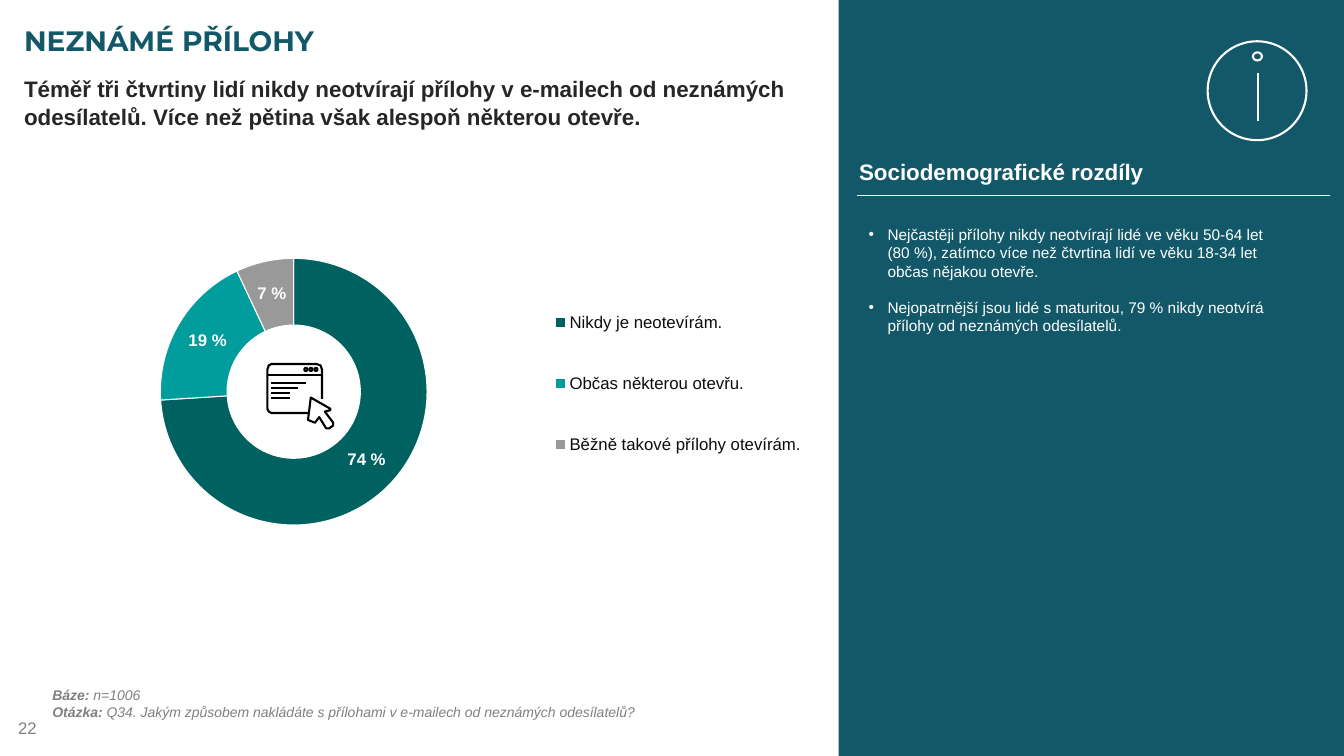
from lxml.etree import SubElement
from pptx import Presentation
from pptx.chart.data import CategoryChartData
from pptx.dml.color import RGBColor
from pptx.enum.chart import XL_CHART_TYPE, XL_LEGEND_POSITION
from pptx.enum.shapes import MSO_CONNECTOR, MSO_SHAPE
from pptx.enum.text import MSO_ANCHOR, PP_ALIGN
from pptx.oxml import parse_xml
from pptx.oxml.ns import nsdecls, qn
from pptx.util import Pt

TEAL = "135868"
WHITE = "FFFFFF"
BLACK = "000000"
GRAY = "808080"


def color(value):
    """Turn a hex string into a colour."""
    return RGBColor.from_string(value)


def style_font(font, size, value, bold=False, italic=False, name="Arial"):
    """Format a font."""
    font.name, font.size = name, Pt(size)
    font.bold, font.italic = bold, italic
    font.color.rgb = color(value)


def place(shape, left, top, width, height):
    """Position a shape, in points."""
    shape.left, shape.top = Pt(left), Pt(top)
    shape.width, shape.height = Pt(width), Pt(height)


def set_margins(frame, horizontal, vertical):
    """Set the inner margins of a text frame."""
    frame.margin_left = frame.margin_right = Pt(horizontal)
    frame.margin_top = frame.margin_bottom = Pt(vertical)


def fill_placeholder(placeholder, box, text, size, value, name, anchor):
    """Place a placeholder and fill it with one bold, left-aligned paragraph."""
    place(placeholder, *box)
    frame = placeholder.text_frame
    frame.text = text
    frame.word_wrap = True
    frame.vertical_anchor = anchor
    set_margins(frame, 7.2, 3.6)
    paragraph = frame.paragraphs[0]
    paragraph.alignment = PP_ALIGN.LEFT
    paragraph.space_before = Pt(0)
    properties = paragraph._p.get_or_add_pPr()
    properties.set("marL", "0")
    properties.set("indent", "0")
    SubElement(properties, qn("a:buNone"))
    style_font(paragraph.runs[0].font, size, value, True, name=name)
    return paragraph


def add_text(slide, box, lines, wrap=True, margins=(7.2, 3.6)):
    """Add a text box whose lines are lists of (text, font settings) runs."""
    frame = slide.shapes.add_textbox(*map(Pt, box)).text_frame
    frame.word_wrap = wrap
    set_margins(frame, *margins)
    for index, runs in enumerate(lines):
        paragraph = frame.add_paragraph() if index else frame.paragraphs[0]
        for text, settings in runs:
            run = paragraph.add_run()
            run.text = text
            style_font(run.font, *settings)
    return frame


def add_bullets(paragraphs, gap):
    """Give paragraphs hanging bullets and a gap between them."""
    for index, paragraph in enumerate(paragraphs):
        paragraph.space_before = Pt(gap if index else 0)
        properties = paragraph._p.get_or_add_pPr()
        properties.set("marL", str(Pt(13.5)))
        properties.set("indent", str(-Pt(13.5)))
        SubElement(properties, qn("a:buFont")).set("typeface", "Arial")
        SubElement(properties, qn("a:buChar")).set("char", "•")


def add_line(slide, start, end, value, width):
    """Add a straight line without a shadow."""
    line = slide.shapes.add_connector(MSO_CONNECTOR.STRAIGHT, *map(Pt, start + end))
    line.line.color.rgb = color(value)
    line.line.width = Pt(width)
    SubElement(line._element.spPr, qn("a:effectLst"))


def outline(shape, value):
    """Leave only a 1.5 pt outline on a shape."""
    shape.shadow.inherit = False
    shape.fill.background()
    shape.line.color.rgb = color(value)
    shape.line.width = Pt(1.5)


def add_ring(slide, box, value):
    """Add an unfilled ellipse."""
    outline(slide.shapes.add_shape(MSO_SHAPE.OVAL, *map(Pt, box)), value)


def add_path(slide, points, close):
    """Add a black outline through points."""
    builder = slide.shapes.build_freeform(*points[0], scale=Pt(1))
    builder.add_line_segments(points[1:], close=close)
    outline(builder.convert_to_shape(), BLACK)


def set_layout(parent, layout):
    """Give a chart element a manual layout as fractions of the chart."""
    for old in parent.findall(qn("c:layout")):
        parent.remove(old)
    inner = '<c:layoutTarget val="inner"/>' if parent.tag == qn("c:plotArea") else ""
    modes = '<c:xMode val="edge"/><c:yMode val="edge"/>'
    values = "".join(f'<c:{key} val="{value}"/>' for key, value in zip("xywh", layout))
    element = parse_xml(
        f'<c:layout {nsdecls("c")}><c:manualLayout>{inner}{modes}{values}'
        "</c:manualLayout></c:layout>"
    )
    position = 1 if parent.tag == qn("c:legend") else 0
    parent.insert(position, element)


def add_doughnut(slide, box, answers):
    """Add a doughnut chart from (answer, percentage, colour) rows."""
    data = CategoryChartData()
    data.categories = [answer for answer, _, _ in answers]
    data.add_series("Series 1", [share for _, share, _ in answers])
    chart = slide.shapes.add_chart(XL_CHART_TYPE.DOUGHNUT, *map(Pt, box), data).chart
    chart.has_title = False
    style_font(chart.font, 10, BLACK)
    chart.has_legend = True
    chart.legend.position = XL_LEGEND_POSITION.RIGHT
    chart.legend.include_in_layout = False
    style_font(chart.legend.font, 12, "0D0D0D")
    set_layout(chart.legend._element, (0.59, 0.2, 0.4, 0.54))
    set_layout(chart._chartSpace.chart.plotArea, (0.096, 0.17, 0.428, 0.639))
    plot = chart.plots[0]
    plot.vary_by_categories = True
    plot.has_data_labels = True
    labels = plot.data_labels
    labels.show_value, labels.show_percentage = True, False
    labels.number_format = '#,##0\\ "%"'
    labels.number_format_is_linked = False
    style_font(labels.font, 12, WHITE, True)
    for index, (_, _, value) in enumerate(answers):
        slice_format = plot.series[0].points[index].format
        slice_format.fill.solid()
        slice_format.fill.fore_color.rgb = color(value)
        slice_format.line.color.rgb = color(WHITE)
        slice_format.line.width = Pt(0.75)


def add_browser_icon(slide):
    """Draw a browser window with a mouse pointer."""
    add_path(slide, [(224.6, 302.4), (219.6, 300.2), (222, 283.5), (236.2, 291.6),
                     (236.2, 293), (231.8, 294.5), (237.6, 302.4), (237.6, 303.8),
                     (234.7, 306), (233.3, 306.4), (227.5, 298.1)], True)
    add_path(slide, [(219.6, 295.2), (194.4, 295.2), (191.9, 294.1), (190.8, 291.6),
                     (190.8, 263.5), (191.9, 261), (194.4, 259.9), (226.1, 259.9),
                     (229.2, 261), (230.4, 263.5), (230.4, 285.1)], False)
    add_line(slide, (190.8, 267.8), (230.4, 267.8), BLACK, 1.5)
    for row, right in enumerate((218.9, 213.1, 207.4, 207.4)):
        top = 273.6 + 3.6 * row
        add_line(slide, (193.7, top), (right, top), BLACK, 1.5)
    for column in range(3):
        add_ring(slide, (217.4 + 3.6 * column, 262.8, 2.2, 2.2), BLACK)


def add_side_panel(slide):
    """Add the panel on demographic differences."""
    panel = slide.shapes.add_shape(MSO_SHAPE.RECTANGLE, Pt(599), 0, Pt(361), Pt(540))
    panel.shadow.inherit = False
    panel.fill.solid()
    panel.fill.fore_color.rgb = color(TEAL)
    panel.line.fill.background()
    add_line(slide, (612, 139.7), (949.7, 139.7), WHITE, 0.5)
    add_text(slide, (606.6, 109.4, 224, 26.6),
             [[("Sociodemografické rozdíly", (16, WHITE, True))]], wrap=False)
    findings = (
        "Nejčastěji přílohy nikdy neotvírají lidé ve věku 50-64 let (80 %), zatímco více "
        "než čtvrtina lidí ve věku 18-34 let občas nějakou otevře.",
        "Nejopatrnější jsou lidé s maturitou, 79 % nikdy neotvírá přílohy od neznámých "
        "odesílatelů.",
    )
    frame = add_text(slide, (613.4, 157, 300.2, 113.8),
                     [[(finding, (11, WHITE))] for finding in findings])
    add_bullets(frame.paragraphs, 12.7)
    add_ring(slide, (862.6, 29.5, 70.6, 70.6), WHITE)
    add_line(slide, (898.4, 52.4), (898.4, 86.6), WHITE, 1.5)
    add_ring(slide, (895, 37.4, 6.4, 5.8), WHITE)


def main():
    """Build and save the slide."""
    presentation = Presentation()
    presentation.slide_width, presentation.slide_height = Pt(960), Pt(540)
    slide = presentation.slides.add_slide(presentation.slide_layouts[1])
    fill_placeholder(slide.shapes.title, (10, 10, 940, 38), "NEZNÁMÉ PŘÍLOHY",
                     20, TEAL, "Montserrat", MSO_ANCHOR.MIDDLE)
    message = fill_placeholder(
        slide.placeholders[1], (10, 49, 583, 50.4),
        "Téměř tři čtvrtiny lidí nikdy neotvírají přílohy v e-mailech od neznámých "
        "odesílatelů. Více než pětina však alespoň některou otevře.",
        16, "262626", "Arial", MSO_ANCHOR.TOP)
    message.line_spacing = 1.05
    number = add_text(slide, (3.6, 505.4, 224, 28.8), [[("22", (12, GRAY))]],
                      margins=(9.4, 5))
    number.vertical_anchor = MSO_ANCHOR.MIDDLE
    notes = (("Báze: ", "n=1006"),
             ("Otázka: ", "Q34. Jakým způsobem nakládáte s přílohami v e-mailech od "
                          "neznámých odesílatelů?"))
    add_text(slide, (37.4, 490.3, 561.6, 24.5),
             [[(label, (10, GRAY, True, True)), (text, (10, GRAY, False, True))]
              for label, text in notes], margins=(0, 0))
    add_doughnut(slide, (32.4, 133.9, 572.4, 298.1),
                 (("Nikdy je neotevírám.", 74, "006260"),
                  ("Občas některou otevřu.", 19, "009D9C"),
                  ("Běžně takové přílohy otevírám.", 7, "999999")))
    add_browser_icon(slide)
    add_side_panel(slide)
    presentation.save("out.pptx")


if __name__ == "__main__":
    main()
